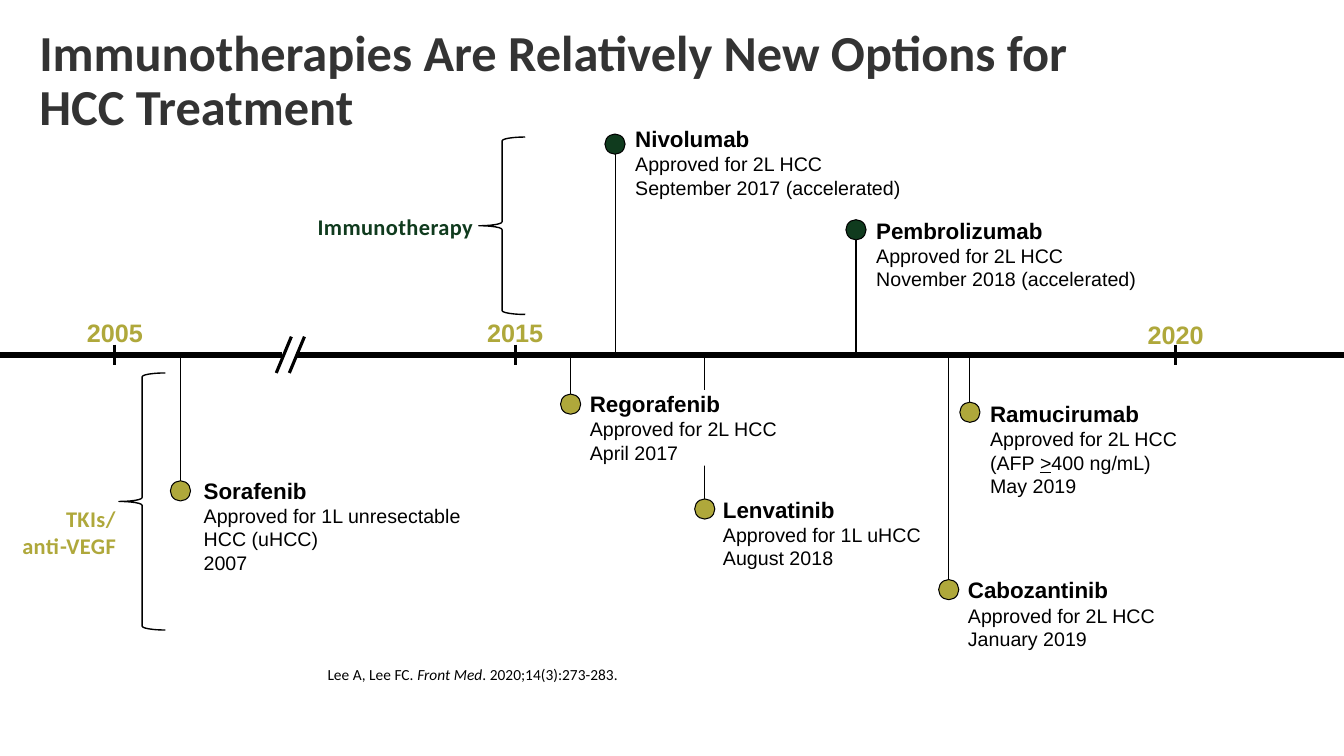
from lxml import etree
from pptx import Presentation
from pptx.dml.color import RGBColor
from pptx.enum.shapes import MSO_CONNECTOR, MSO_SHAPE
from pptx.enum.text import MSO_ANCHOR, MSO_AUTO_SIZE, PP_ALIGN
from pptx.oxml.ns import qn
from pptx.util import Inches, Pt

STRAIGHT = MSO_CONNECTOR.STRAIGHT
ELLIPSE, LEFT_BRACE = MSO_SHAPE.OVAL, MSO_SHAPE.LEFT_BRACE
LEFT, CENTER, RIGHT = PP_ALIGN.LEFT, PP_ALIGN.CENTER, PP_ALIGN.RIGHT
MIDDLE, NO_AUTOFIT = MSO_ANCHOR.MIDDLE, MSO_AUTO_SIZE.NONE

BLACK, WHITE, GRAY = "000000", "FFFFFF", "333333"
OLIVE, GREEN = "AFA83B", "103B1E"
AXIS_Y = 3.52
DOT = 0.2

# dot centre x, dot top, colour, label (left, top, width, height), name, details
# Text between bars is underlined. Later labels cover earlier stems.
MILESTONES = [
    (1.79, 4.77, OLIVE, (2.02, 4.73, 3.01, 0.95), "Sorafenib",
     ["Approved for 1L unresectable", "HCC (uHCC)", "2007"]),
    (9.41, 5.75, OLIVE, (9.6, 5.72, 3.55, 0.75), "Cabozantinib",
     ["Approved for 2L HCC", "January 2019"]),
    (6.99, 4.95, OLIVE, (7.17, 4.92, 2.05, 0.75), "Lenvatinib",
     ["Approved for 1L uHCC", "August 2018"]),
    (5.66, 3.91, OLIVE, (5.85, 3.87, 2.24, 0.75), "Regorafenib",
     ["Approved for 2L HCC", "April 2017"]),
    (9.62, 3.99, OLIVE, (9.82, 3.97, 2.68, 0.95), "Ramucirumab",
     ["Approved for 2L HCC", "(AFP |>|400 ng/mL)", "May 2019"]),
    (8.49, 2.18, GREEN, (8.69, 2.15, 3.01, 0.75), "Pembrolizumab",
     ["Approved for 2L HCC", "November 2018 (accelerated)"]),
    (6.1, 1.33, GREEN, (6.3, 1.24, 3.21, 0.75), "Nivolumab",
     ["Approved for 2L HCC", "September 2017 (accelerated)"]),
]


def color(value):
    return RGBColor.from_string(value)


def set_font(paragraph, name, size, value, bold=False):
    font = paragraph.font
    font.name, font.size, font.bold = name, Pt(size), bold
    font.color.rgb = color(value)


def add_line(slide, x1, y1, x2, y2, width):
    line = slide.shapes.add_connector(
        STRAIGHT, Inches(x1), Inches(y1), Inches(x2), Inches(y2))
    line.line.color.rgb = color(BLACK)
    line.line.width = Pt(width)
    etree.SubElement(line._element.spPr, qn("a:effectLst"))


def add_shape(slide, kind, box, width, fill=None):
    shape = slide.shapes.add_shape(kind, *map(Inches, box))
    shape.shadow.inherit = False
    if fill:
        shape.fill.solid()
        shape.fill.fore_color.rgb = color(fill)
    else:
        shape.fill.background()
    shape.line.color.rgb = color(BLACK)
    shape.line.width = Pt(width)


def add_text_box(slide, box, margin=0):
    text_box = slide.shapes.add_textbox(*map(Inches, box))
    frame = text_box.text_frame
    frame.word_wrap = True
    frame.margin_left = frame.margin_right = Inches(margin)
    frame.margin_top = frame.margin_bottom = Inches(margin / 2)
    return text_box


def add_text(slide, box, text, font_name, size, value, alignment):
    paragraph = add_text_box(slide, box).text_frame.paragraphs[0]
    paragraph.text = text
    paragraph.alignment = alignment
    set_font(paragraph, font_name, size, value, bold=True)
    return paragraph


def add_marked_runs(paragraph, text, style):
    """Add runs, switching on the font attribute `style` between bars."""
    for index, piece in enumerate(text.split("|")):
        run = paragraph.add_run()
        run.text = piece
        if index % 2:
            setattr(run.font, style, True)


def add_title(slide, text):
    title = slide.shapes.title
    title.left, title.top = Inches(0.29), Inches(0.19)
    title.width, title.height = Inches(12.78), Inches(1.25)
    frame = title.text_frame
    frame.auto_size = NO_AUTOFIT
    frame.vertical_anchor = MIDDLE
    paragraph = frame.paragraphs[0]
    paragraph.text = text
    paragraph.alignment = LEFT
    paragraph.line_spacing = 0.9
    set_font(paragraph, "Calibri", 36, GRAY, bold=True)


def add_year(slide, x, label_top, year):
    add_line(slide, x, AXIS_Y - 0.1, x, AXIS_Y + 0.1, 2.25)
    add_text(slide, (x - 0.5, label_top, 1, 0.3), year,
             "Arial", 18, OLIVE, CENTER)


def add_axis(slide):
    add_line(slide, 0, AXIS_Y, 2.8, AXIS_Y, 4.5)
    add_line(slide, 2.94, AXIS_Y, 13.33, AXIS_Y, 4.5)
    for x in (2.74, 2.87):
        add_line(slide, x, 3.7, x + 0.15, 3.34, 2.25)
    for x, label_top, year in ((1.14, 3.15, "2005"), (5.11, 3.15, "2015"),
                               (11.66, 3.17, "2020")):
        add_year(slide, x, label_top, year)


def add_milestone(slide, x, dot_top, dot_color, label_box, name, details):
    stem_end = dot_top if dot_top > AXIS_Y else dot_top + DOT
    add_line(slide, x, AXIS_Y, x, stem_end, 0.75)
    add_shape(slide, ELLIPSE, (x - DOT / 2, dot_top, DOT, DOT), 0.75, dot_color)
    label = add_text_box(slide, label_box)
    label.fill.solid()
    label.fill.fore_color.rgb = color(WHITE)
    heading = label.text_frame.paragraphs[0]
    heading.text = name
    set_font(heading, "Arial", 16, BLACK, bold=True)
    for detail in details:
        paragraph = label.text_frame.add_paragraph()
        add_marked_runs(paragraph, detail, "underline")
        set_font(paragraph, "Arial", 14, BLACK)


def add_group(slide, brace_box, label_box, text, value, alignment):
    """Add a drug class: a brace and its label."""
    add_shape(slide, LEFT_BRACE, brace_box, 1)
    paragraph = add_text(slide, label_box, text, "Calibri", 16, value, alignment)
    for run in paragraph.runs:
        run._r.get_or_add_rPr().set("spc", "30")


def add_citation(slide, text):
    box = add_text_box(slide, (3.15, 6.57, 9.92, 0.8), margin=0.1)
    paragraph = box.text_frame.paragraphs[0]
    add_marked_runs(paragraph, text, "italic")
    paragraph.line_spacing = 0.9
    set_font(paragraph, "Calibri", 11, BLACK)


def main():
    presentation = Presentation()
    presentation.slide_width = Inches(13.33)
    presentation.slide_height = Inches(7.5)
    slide = presentation.slides.add_slide(presentation.slide_layouts[5])
    add_title(slide, "Immunotherapies Are Relatively New Options for \v"
                     "HCC Treatment")
    add_axis(slide)
    for milestone in MILESTONES:
        add_milestone(slide, *milestone)
    add_group(slide, (4.75, 1.36, 0.46, 1.76), (3.15, 2.11, 1.57, 0.27),
              "Immunotherapy", GREEN, LEFT)
    add_group(slide, (1.18, 3.7, 0.46, 2.55), (0.07, 5.01, 1.08, 0.54),
              "TKIs/\vanti-VEGF", OLIVE, RIGHT)
    add_citation(slide, "Lee A, Lee FC. |Front Med|. 2020;14(3):273-283.")
    presentation.save("out.pptx")


if __name__ == "__main__":
    main()
